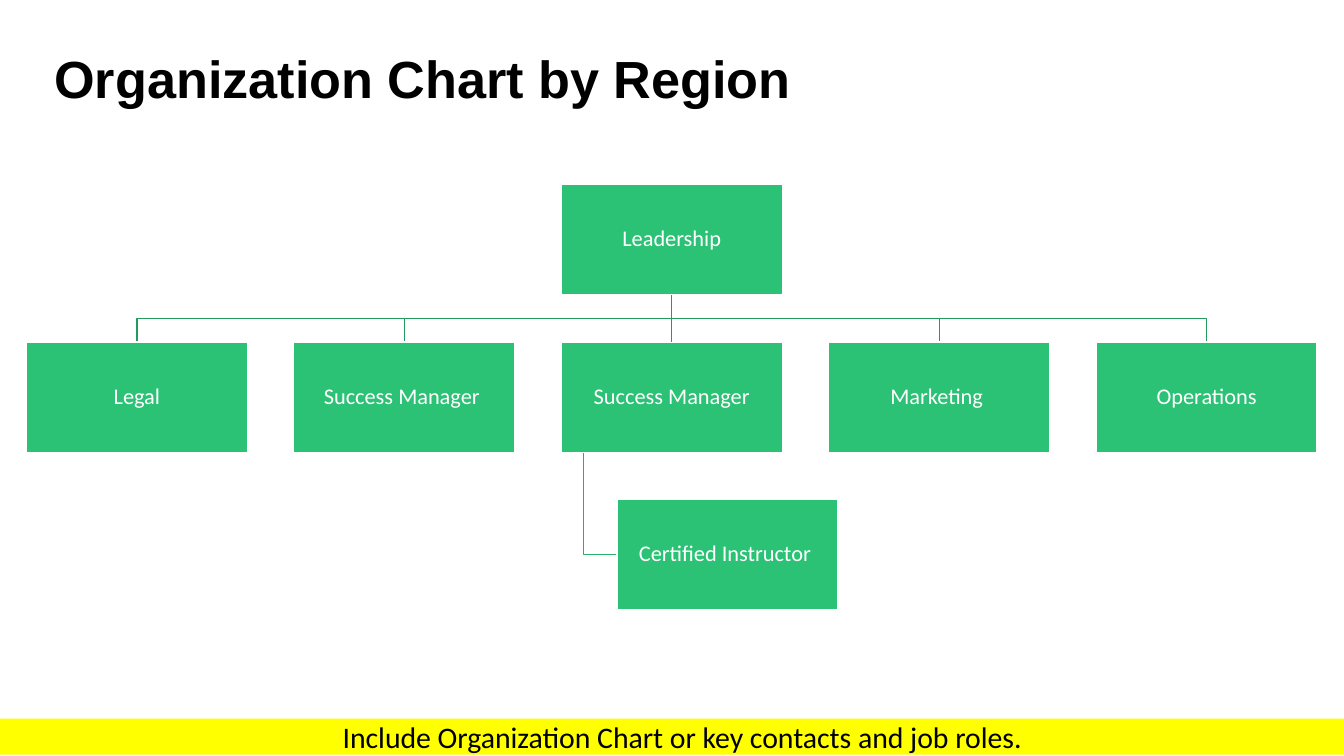
"""Build the organization chart slide."""
from lxml.etree import SubElement
from pptx import Presentation
from pptx.dml.color import RGBColor as RGB
from pptx.enum.shapes import MSO_CONNECTOR as LINK, MSO_SHAPE as SHAPE
from pptx.enum.text import MSO_ANCHOR as ANCHOR, PP_ALIGN as ALIGN
from pptx.oxml.ns import qn
from pptx.util import Cm, Pt

COLORS = {"box": "2BC275", "link": "229B5E", "hook": "27B06A",
          "white": "FFFFFF", "black": "000000", "band": "FFFF00"}
WIDE, HIGH = 5.57, 2.79
MID, STEP = 16.93, 6.74
TOP, ROW, LOW = 4.64, 8.62, 12.58
TEAM = ["Legal", "Success Manager ", "Success Manager", "Marketing ", "Operations"]


def write(shape, text, font, size, color, align, inset=0):
    frame = shape.text_frame
    frame.word_wrap = True
    frame.margin_left = frame.margin_right = Cm(inset)
    frame.margin_top = frame.margin_bottom = Cm(inset)
    frame.text = text
    para = frame.paragraphs[0]
    para.alignment = align
    run = para.runs[0].font
    run.name, run.size = font, Pt(size)
    run.color.rgb = RGB.from_string(COLORS[color])
    return para


def trace(points, color):
    spots = [(Cm(x), Cm(y)) for x, y in points]
    pen = slide.shapes.build_freeform(*spots[0])
    pen.add_line_segments(spots[1:], close=False)
    path = pen.convert_to_shape()
    path.shadow.inherit = False
    path.fill.background()
    path.line.color.rgb = RGB.from_string(COLORS[color])
    path.line.width = Pt(1)


deck = Presentation()
deck.slide_width, deck.slide_height = Cm(33.87), Cm(19.05)
slide = deck.slides.add_slide(deck.slide_layouts[6])

title = slide.shapes.add_textbox(Cm(1.37), Cm(1.35), Cm(31.14), Cm(1.47))
para = write(title, "Organization Chart by Region", "Arial", 37.3, "black", ALIGN.LEFT)
para.line_spacing = 0.9
para.runs[0].font.bold = True

bus = (TOP + HIGH + ROW) / 2
for i in (0, 1, 3, 4):
    x = MID + (i - 2) * STEP
    trace([(MID, TOP + HIGH), (MID, bus), (x, bus), (x, ROW)], "link")
trace([(14.71, ROW + HIGH), (14.71, LOW + HIGH / 2), (15.55, LOW + HIGH / 2)], "hook")

left = MID - WIDE / 2
spots = [("Leadership", left, TOP)]
spots += [(name, left + (i - 2) * STEP, ROW) for i, name in enumerate(TEAM)]
spots += [("Certified Instructor ", 15.55, LOW)]
boxes = []
for name, x, y in spots:
    box = slide.shapes.add_shape(SHAPE.RECTANGLE, Cm(x), Cm(y), Cm(WIDE), Cm(HIGH))
    box.shadow.inherit = False
    box.fill.solid()
    box.fill.fore_color.rgb = RGB.from_string(COLORS["box"])
    box.line.color.rgb = RGB.from_string(COLORS["white"])
    box.line.width = Pt(1)
    box.text_frame.vertical_anchor = ANCHOR.MIDDLE
    write(box, name, "Calibri", 16, "white", ALIGN.CENTER, 0.03).line_spacing = 0.9
    boxes.append(box)

stem = slide.shapes.add_connector(LINK.STRAIGHT, Cm(MID), Cm(TOP + HIGH), Cm(MID), Cm(ROW))
stem.begin_connect(boxes[0], 2)
stem.end_connect(boxes[3], 0)
stem.line.color.rgb = RGB.from_string(COLORS["link"])
stem.line.width = Pt(1)
SubElement(stem.element.spPr, qn("a:effectLst"))

band = slide.shapes.add_shape(SHAPE.RECTANGLE, 0, Cm(18.11), Cm(34.39), Cm(0.91))
band.shadow.inherit = False
band.fill.solid()
band.fill.fore_color.rgb = RGB.from_string(COLORS["band"])
band.line.fill.background()
band.text_frame.vertical_anchor = ANCHOR.TOP
write(band, "Include Organization Chart or key contacts and job roles.",
      "Calibri", 21.3, "black", ALIGN.CENTER)

deck.save("out.pptx")
